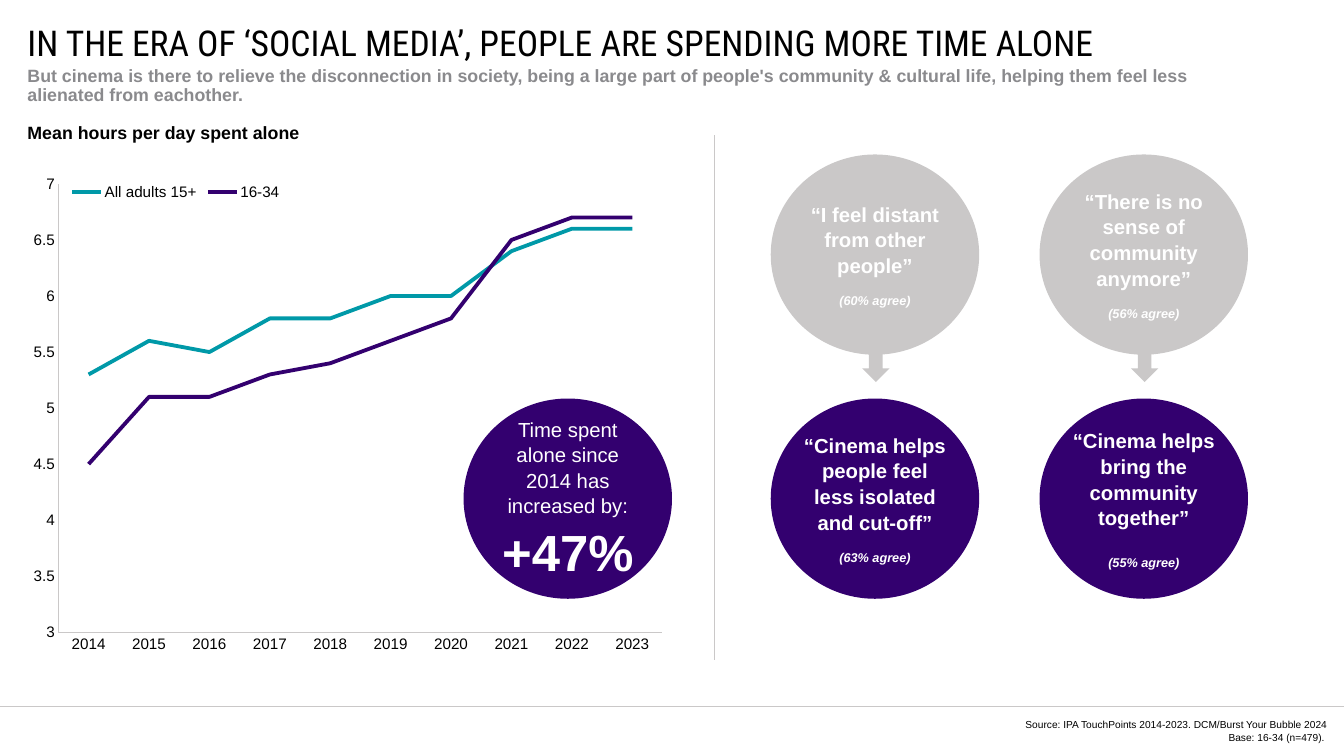
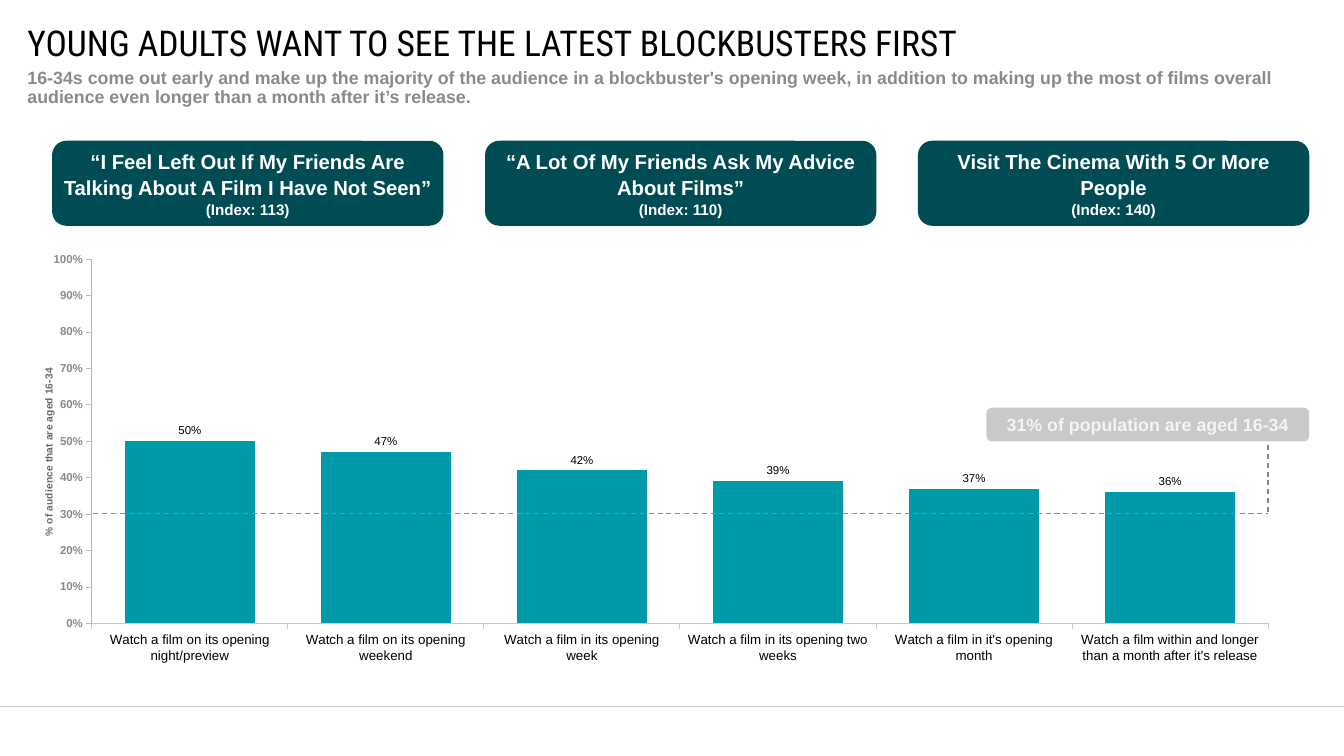
from lxml import etree
from pptx import Presentation
from pptx.chart.data import CategoryChartData
from pptx.dml.color import RGBColor
from pptx.enum import chart as ch, dml, shapes, text
from pptx.oxml import ns
from pptx.util import Inches, Pt

# Shared colours, fonts and measures
BLACK = RGBColor(0x00, 0x00, 0x00)
WHITE = RGBColor(0xFF, 0xFF, 0xFF)
OFF_WHITE = RGBColor(0xF4, 0xF4, 0xF4)
GREY = RGBColor(0x8A, 0x8A, 0x8D)
DARK_GREY = RGBColor(0x67, 0x67, 0x6A)
AXIS_GREY = RGBColor(0xB9, 0xB9, 0xBB)
PALE_GREY = RGBColor(0xCA, 0xC8, 0xC8)
PURPLE = RGBColor(0x33, 0x00, 0x6F)
TEAL = RGBColor(0x00, 0x99, 0xA8)
DARK_TEAL = RGBColor(0x00, 0x4C, 0x54)

BODY_FONT = "Arial"
TITLE_FONT = "Roboto Condensed"
SLIDE_WIDTH, SLIDE_HEIGHT = 14.7, 8.27
MARGIN = 0.3
FOOTER_TOP = 7.73

CENTER, LEFT, RIGHT = text.PP_ALIGN.CENTER, text.PP_ALIGN.LEFT, text.PP_ALIGN.RIGHT
MIDDLE, TOP = text.MSO_ANCHOR.MIDDLE, text.MSO_ANCHOR.TOP


def set_all(target, values):
    for name, value in values.items():
        setattr(target, name, value)


def set_font(font, size, color, bold=False, italic=False, name=BODY_FONT):
    set_all(font, {"name": name, "size": Pt(size), "bold": bold, "italic": italic})
    font.color.rgb = color


def box(left, top, width, height):
    return [Inches(value) for value in (left, top, width, height)]


def write(frame, paragraphs, color, align=LEFT, anchor=TOP, spacing=None, inset=0):
    """Fill a frame; each paragraph is (text, font values, space before)."""
    sides = ("left", "top", "right", "bottom")
    set_all(frame, {f"margin_{side}": Inches(inset) for side in sides})
    set_all(frame, {"word_wrap": True, "vertical_anchor": anchor})
    for index, (words, font, before) in enumerate(paragraphs):
        paragraph = frame.add_paragraph() if index else frame.paragraphs[0]
        set_all(paragraph, {"alignment": align, "line_spacing": spacing,
                            "space_before": Pt(before)})
        run = paragraph.add_run()
        run.text = words
        set_font(run.font, color=color, **font)


def add_text(slide, area, paragraphs, color, **layout):
    frame = slide.shapes.add_textbox(*box(*area)).text_frame
    write(frame, paragraphs, color, **layout)


def add_heading(slide, area, words, color):
    add_text(slide, area, [(words, {"size": 14, "bold": True}, 0)], color, spacing=Pt(15))


def add_panel(slide, kind, area, fill, paragraphs=(), color=WHITE, **layout):
    panel = slide.shapes.add_shape(kind, *box(*area))
    panel.shadow.inherit = False
    panel.fill.solid()
    panel.fill.fore_color.rgb = fill
    panel.line.fill.background()
    write(panel.text_frame, paragraphs, color, align=CENTER, anchor=MIDDLE, **layout)


def add_rule(slide, start, end, color=PALE_GREY, width=0.75, dash=None):
    ends = [Inches(value) for value in (*start, *end)]
    rule = slide.shapes.add_connector(shapes.MSO_CONNECTOR.STRAIGHT, *ends)
    rule.line.color.rgb = color
    rule.line.width = Pt(width)
    if dash:
        rule.line.dash_style = dash
    etree.SubElement(rule._element.spPr, ns.qn("a:effectLst"))


def add_slide(deck, title):
    """Start a slide with the shared title and footer rule."""
    slide = deck.slides.add_slide(deck.slide_layouts[5])
    heading = slide.shapes.title
    place = box(MARGIN, 0.3, 13.58, 0.32)
    set_all(heading, dict(zip(("left", "top", "width", "height"), place)))
    write(heading.text_frame, [(title, {"size": 28, "name": TITLE_FONT}, 0)],
          BLACK, anchor=MIDDLE)
    heading.text_frame.auto_size = text.MSO_AUTO_SIZE.NONE
    add_rule(slide, (0, FOOTER_TOP), (SLIDE_WIDTH, FOOTER_TOP), width=0.5)
    return slide


# Charts
def place_part(part, index, inner=False, **fractions):
    """Give a chart part a fixed place, in fractions of the chart."""
    for old in part.findall(ns.qn("c:layout")):
        part.remove(old)
    layout = etree.Element(ns.qn("c:layout"))
    manual = etree.SubElement(layout, ns.qn("c:manualLayout"))
    values = {"layoutTarget": "inner"} if inner else {}
    values.update(xMode="edge", yMode="edge", **fractions)
    for tag, value in values.items():
        etree.SubElement(manual, ns.qn(f"c:{tag}")).set("val", str(value))
    part.insert(index, layout)


def add_chart(slide, kind, area, categories, series, plot_area, number_format="General"):
    data = CategoryChartData(number_format=number_format)
    data.categories = categories
    for name, values in series:
        data.add_series(name, values)
    chart = slide.shapes.add_chart(kind, *box(*area), data).chart
    set_all(chart, {"has_title": False, "has_legend": False})
    set_font(chart.font, 10, BLACK)
    chart.plots[0].vary_by_categories = False
    place_part(chart._chartSpace.chart.plotArea, 0, inner=True,
               **dict(zip("xywh", plot_area)))
    return chart


def format_axis(axis, tick, size, color=BLACK, bold=False, line=PALE_GREY, **scale):
    set_all(axis, {"has_major_gridlines": False, "major_tick_mark": tick,
                   "minor_tick_mark": ch.XL_TICK_MARK.NONE, **scale})
    set_font(axis.tick_labels.font, size, color, bold)
    axis.format.line.color.rgb = line
    axis.format.line.width = Pt(0.75)


def add_hours_chart(slide):
    series = [
        ("All adults 15+", (5.3, 5.6, 5.5, 5.8, 5.8, 6, 6, 6.4, 6.6, 6.6)),
        ("16-34", (4.5, 5.1, 5.1, 5.3, 5.4, 5.6, 5.8, 6.5, 6.7, 6.7)),
    ]
    chart = add_chart(slide, ch.XL_CHART_TYPE.LINE, (MARGIN, 1.85, 7.06, 5.6),
                      [str(year) for year in range(2014, 2024)], series,
                      (0.048, 0.029, 0.936, 0.876))
    for line, color in zip(chart.plots[0].series, (TEAL, PURPLE)):
        line.smooth = False
        line.marker.style = ch.XL_MARKER_STYLE.NONE
        line.format.line.color.rgb = color
        line.format.line.width = Pt(3)
    no_tick = ch.XL_TICK_MARK.NONE
    format_axis(chart.category_axis, no_tick, 12)
    format_axis(chart.value_axis, no_tick, 12,
                minimum_scale=3, maximum_scale=7, major_unit=0.5)
    chart.has_legend = True
    set_all(chart.legend, {"position": ch.XL_LEGEND_POSITION.BOTTOM,
                           "include_in_layout": False})
    set_font(chart.legend.font, 12, BLACK)
    place_part(chart.legend._element, 1, x=0.06, y=0.02, w=0.34, h=0.05)


def add_audience_chart(slide):
    categories = [
        "Watch a film on its opening night/preview",
        "Watch a film on its opening weekend",
        "Watch a film in its opening week",
        "Watch a film in its opening two weeks",
        "Watch a film in it's opening month",
        "Watch a film within and longer than a month after it's release",
    ]
    chart = add_chart(slide, ch.XL_CHART_TYPE.COLUMN_CLUSTERED, (MARGIN, 2.69, 13.82, 4.7),
                      categories, [("Series 1", (0.5, 0.47, 0.42, 0.39, 0.37, 0.36))],
                      (0.051, 0.031, 0.931, 0.848), "0%")
    plot = chart.plots[0]
    plot.gap_width = 50
    columns = plot.series[0]
    columns.format.fill.solid()
    columns.format.fill.fore_color.rgb = TEAL
    labels = columns.data_labels
    set_all(labels, {"show_value": True, "number_format": "0%",
                     "number_format_is_linked": False,
                     "position": ch.XL_LABEL_POSITION.OUTSIDE_END})
    set_font(labels.font, 9, BLACK)

    outside = ch.XL_TICK_MARK.OUTSIDE
    format_axis(chart.category_axis, outside, 10.5)
    shares = chart.value_axis
    format_axis(shares, outside, 9, GREY, True, AXIS_GREY,
                minimum_scale=0, maximum_scale=1, major_unit=0.1)
    set_all(shares.tick_labels, {"number_format": "0%", "number_format_is_linked": False})
    caption = shares.axis_title.text_frame
    caption.text = "% of audience that are aged 16-34"
    set_font(caption.paragraphs[0].runs[0].font, 8, DARK_GREY, bold=True)
    caption._element.bodyPr.set("rot", "-5400000")
    place_part(shares.axis_title._element, 1, x=0.01, y=0.28)


# Slides
def build_time_alone(deck):
    slide = add_slide(deck, "IN THE ERA OF ‘SOCIAL MEDIA’, PEOPLE ARE SPENDING MORE TIME ALONE")
    add_heading(slide, (MARGIN, 0.73, 13.59, 0.48),
                "But cinema is there to relieve the disconnection in society, being a large "
                "part of people's community & cultural life, helping them feel less "
                "alienated from eachother.", GREY)
    add_heading(slide, (MARGIN, 1.36, 9.03, 0.23), "Mean hours per day spent alone", BLACK)
    source = ("Source: IPA TouchPoints 2014-2023. DCM/Burst Your Bubble 2024",
              "Base: 16-34 (n=479). ")
    add_text(slide, (10.95, 7.86, 3.57, 0.27), [(line, {"size": 8}, 0) for line in source],
             BLACK, align=RIGHT, anchor=MIDDLE, spacing=1.05)
    add_hours_chart(slide)
    add_rule(slide, (7.81, 1.48), (7.81, 7.22))

    # Bubbles: feelings above, cinema's answers below
    bubble_width, bubble_height = 2.28, 2.19
    upper, lower = 1.69, 4.36
    first, second = 8.43, 11.37

    def add_bubble(left, top, fill, paragraphs):
        add_panel(slide, shapes.MSO_SHAPE.OVAL, (left, top, bubble_width, bubble_height),
                  fill, paragraphs, spacing=1.05)

    add_bubble(5.07, lower, PURPLE, [
        ("Time spent alone since 2014 has increased by:", {"size": 16}, 0),
        ("+47%", {"size": 40, "bold": True}, 0)])
    quotes = [
        (first, upper, PALE_GREY, "“I feel distant from other people”", 60, 12),
        (second, upper, PALE_GREY, "“There is no sense of community anymore”", 56, 12),
        (first, lower, PURPLE, "“Cinema helps people feel less isolated and cut-off”", 63, 12),
        (second, lower, PURPLE, "“Cinema helps bring the community together”", 55, 19),
    ]
    for left, top, fill, quote, share, gap in quotes:
        add_bubble(left, top, fill, [
            (quote, {"size": 16, "bold": True}, 0),
            (f"({share}% agree)", {"size": 10, "bold": True, "italic": True}, gap)])
    for left in (first, second):
        add_panel(slide, shapes.MSO_SHAPE.DOWN_ARROW, (left + 1, 3.81, 0.3, 0.37), PALE_GREY)


def build_blockbusters(deck):
    slide = add_slide(deck, "YOUNG ADULTS WANT TO SEE THE LATEST BLOCKBUSTERS FIRST")
    add_heading(slide, (MARGIN, 0.75, 13.82, 0.48),
                "16-34s come out early and make up the majority of the audience in a "
                "blockbuster's opening week, in addition to making up the most of films "
                "overall audience even longer than a month after it’s release.", GREY)
    add_audience_chart(slide)

    # Population benchmark
    rounded = shapes.MSO_SHAPE.ROUNDED_RECTANGLE
    add_panel(slide, rounded, (10.79, 4.46, 3.53, 0.37), PALE_GREY,
              [("31% of population are aged 16-34", {"size": 14, "bold": True}, 0)],
              OFF_WHITE, inset=0.05)
    corner = (13.87, 5.62)
    for start in ((1.02, 5.62), (13.87, 4.87)):
        add_rule(slide, start, corner, GREY, 1, dml.MSO_LINE.DASH)

    # Attitude cards
    cards = [
        ("“I Feel Left Out If My Friends Are Talking About A Film I Have Not Seen”", 113),
        ("“A Lot Of My Friends Ask My Advice About Films”", 110),
        ("Visit The Cinema With 5 Or More People", 140),
    ]
    first, right_edge, width = 0.57, 14.32, 4.28
    step = (right_edge - width - first) / (len(cards) - 1)
    for column, (statement, index) in enumerate(cards):
        add_panel(slide, rounded, (first + column * step, 1.54, width, 0.93), DARK_TEAL, [
            (statement, {"size": 16, "bold": True}, 0),
            (f"(Index: {index})", {"size": 12, "bold": True}, 0)], spacing=1.05)


def main():
    deck = Presentation()
    deck.slide_width, deck.slide_height = Inches(SLIDE_WIDTH), Inches(SLIDE_HEIGHT)
    build_time_alone(deck)
    build_blockbusters(deck)
    deck.save("out.pptx")


if __name__ == "__main__":
    main()
